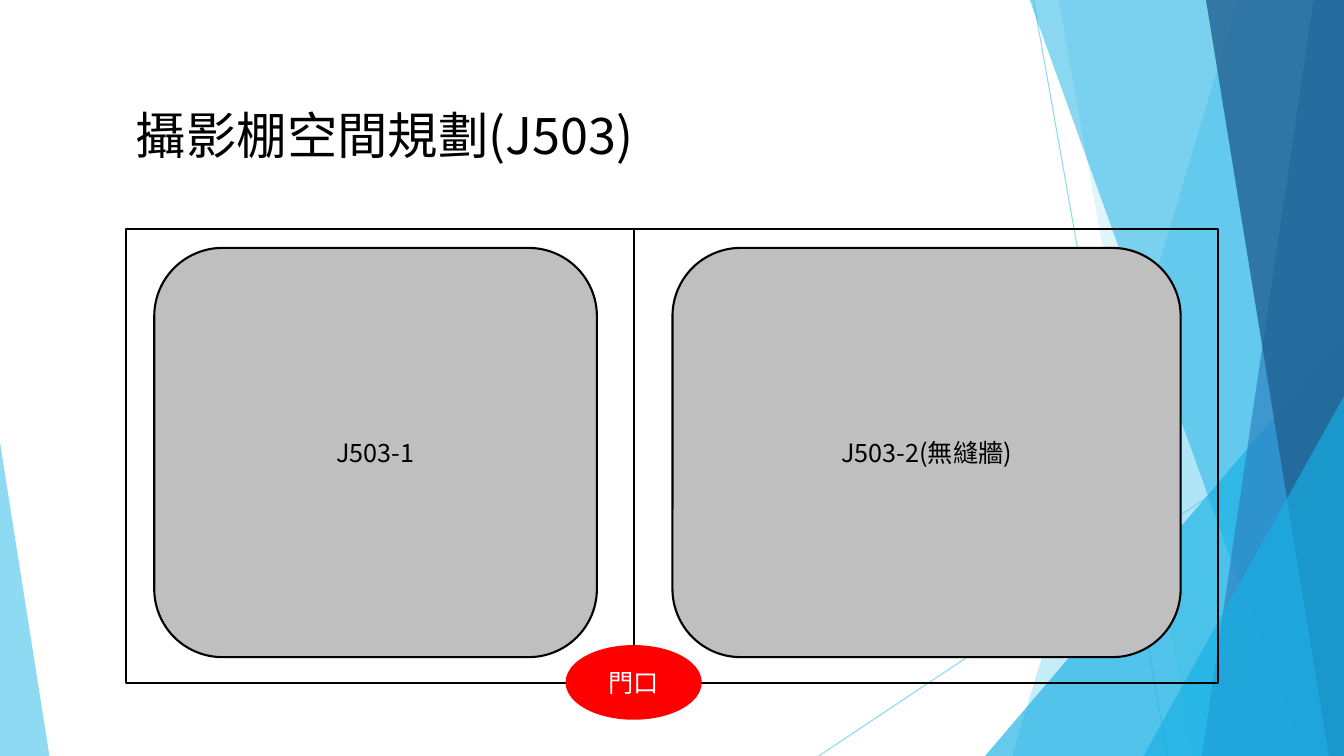
from dataclasses import dataclass

from lxml.etree import SubElement
from pptx import Presentation
from pptx.dml.color import RGBColor
from pptx.enum.shapes import MSO_CONNECTOR, MSO_SHAPE
from pptx.enum.text import MSO_ANCHOR, PP_ALIGN
from pptx.oxml.ns import qn
from pptx.util import Inches, Pt


@dataclass(frozen=True)
class Theme:
    sky: str = "5FCBEF"
    cyan: str = "17B0E4"
    blue: str = "2E83C3"
    navy: str = "226292"
    black: str = "000000"
    white: str = "FFFFFF"
    gray: str = "BFBFBF"
    red: str = "FF0000"
    font: str = "Noto Sans CJK SC"
    door_font: str = "Lato"
    title_size: int = 36
    label_size: int = 18
    hairline: float = 0.75
    wall: float = 1
    outline: float = 1.5


THEME = Theme()
WIDTH, HEIGHT = 13.33, 7.5
TOP = -0.01


def set_alpha(fill_parent, percent):
    color = fill_parent.find(".//" + qn("a:srgbClr"))
    SubElement(color, qn("a:alpha")).set("val", str(percent * 1000))


def paint(shape, fill=None, line=None, alpha=None):
    shape.shadow.inherit = False
    if fill:
        shape.fill.solid()
        shape.fill.fore_color.rgb = RGBColor.from_string(fill)
        if alpha:
            set_alpha(shape._element.spPr, alpha)
    else:
        shape.fill.background()
    if line:
        shape.line.color.rgb = RGBColor.from_string(line)
        shape.line.width = Pt(THEME.outline)
    else:
        shape.line.fill.background()


def add_preset(page, kind, box, fill=None, line=None, alpha=None):
    shape = page.shapes.add_shape(kind, *map(Inches, box))
    paint(shape, fill, line, alpha)
    return shape


def add_triangle(page, box, apex, fill, alpha):
    add_preset(page, MSO_SHAPE.ISOSCELES_TRIANGLE, box, fill, alpha=alpha).adjustments[0] = apex


def add_band(page, top_left, bottom_left, fill, alpha):
    corners = [(top_left, TOP), (WIDTH, TOP), (WIDTH, HEIGHT), (bottom_left, HEIGHT)]
    points = [(Inches(x), Inches(y)) for x, y in corners]
    builder = page.shapes.build_freeform(*points[0], scale=1.0)
    builder.add_line_segments(points[1:], close=True)
    paint(builder.convert_to_shape(), fill, alpha=alpha)


def add_line(page, start, end, color, width, alpha=None):
    line = page.shapes.add_connector(MSO_CONNECTOR.STRAIGHT, *map(Inches, start + end))
    line.line.color.rgb = RGBColor.from_string(color)
    line.line.width = Pt(width)
    properties = line._element.spPr
    if alpha:
        set_alpha(properties, alpha)
    SubElement(properties, qn("a:effectLst"))


def write(shape, text, size, color, font, align, anchor):
    frame = shape.text_frame
    frame.word_wrap = True
    frame.vertical_anchor = anchor
    para = frame.paragraphs[0]
    para.alignment = align
    span = para.add_run()
    span.text = text
    span.font.size = Pt(size)
    span.font.color.rgb = RGBColor.from_string(color)
    span.font.name = font
    SubElement(span._r.get_or_add_rPr(), qn("a:ea")).set("typeface", font)


def add_label(page, kind, box, text, fill, line, color, font):
    shape = add_preset(page, kind, box, fill, line)
    write(shape, text, THEME.label_size, color, font, PP_ALIGN.CENTER, MSO_ANCHOR.MIDDLE)


def add_title(page, text):
    box = page.shapes.add_textbox(*map(Inches, (1.25, 0.98, 10.83, 1.14)))
    write(box, text, THEME.title_size, THEME.black, THEME.font, PP_ALIGN.LEFT, MSO_ANCHOR.TOP)


def add_backdrop(page):
    for start, end in [((10.25, 0), (11.58, HEIGHT)), ((WIDTH, 4.03), (8.12, HEIGHT))]:
        add_line(page, start, end, THEME.sky, THEME.hairline, 70)
    add_band(page, 12.28, 10.04, THEME.sky, 36)
    add_band(page, 10.5, 11.83, THEME.sky, 20)
    add_triangle(page, (9.77, 3.33, 3.56, 4.17), 1, THEME.cyan, 66)
    add_band(page, 10.21, 12.91, THEME.cyan, 50)
    add_band(page, 13.03, 11.92, THEME.blue, 70)
    add_band(page, 11.96, 13.18, THEME.navy, 80)
    add_triangle(page, (11.34, 3.93, 1.99, 3.57), 1, THEME.cyan, 66)
    add_triangle(page, (0, 4.39, 0.49, 3.11), 0, THEME.sky, 70)


def add_floor_plan(page):
    add_preset(page, MSO_SHAPE.RECTANGLE, (1.25, 2.27, 10.83, 4.51), line=THEME.black)
    add_line(page, (6.29, 2.28), (6.29, 6.75), THEME.black, THEME.wall)
    for text, left, width in [("J503-1", 1.53, 4.39), ("J503-2(無縫牆)", 6.67, 5.04)]:
        add_label(page, MSO_SHAPE.ROUNDED_RECTANGLE, (left, 2.46, width, 4.06), text,
                  THEME.gray, THEME.black, THEME.black, THEME.font)
    add_label(page, MSO_SHAPE.OVAL, (5.62, 6.41, 1.33, 0.72), "門口",
              THEME.red, THEME.red, THEME.white, THEME.door_font)


def main():
    deck = Presentation()
    deck.slide_width, deck.slide_height = Inches(WIDTH), Inches(HEIGHT)
    page = deck.slides.add_slide(deck.slide_layouts[6])
    add_backdrop(page)
    add_title(page, "攝影棚空間規劃(J503)")
    add_floor_plan(page)
    deck.save("out.pptx")


if __name__ == "__main__":
    main()
